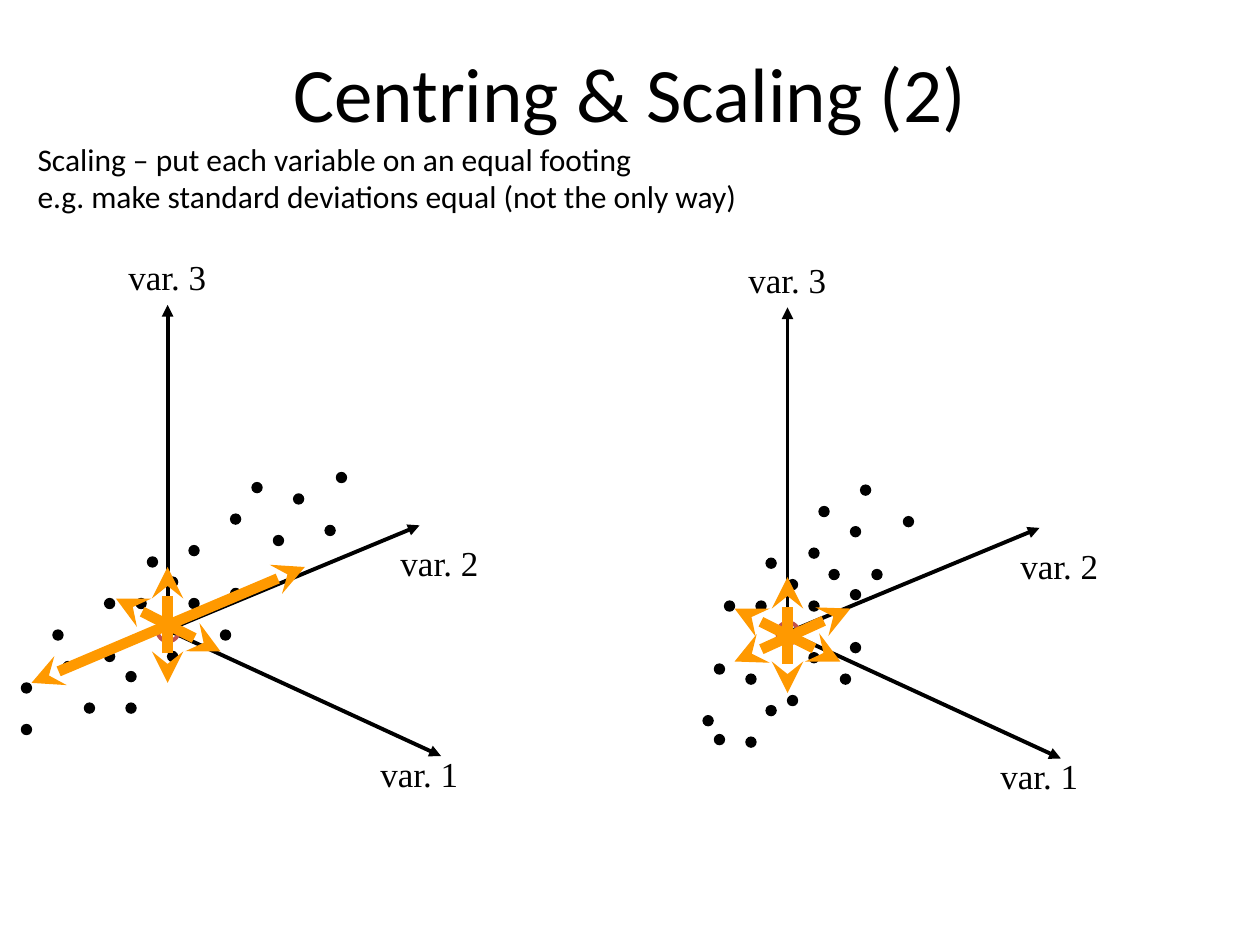
from pptx import Presentation
from pptx.dml.color import RGBColor as Rgb
from pptx.enum.shapes import MSO_CONNECTOR as Conn, MSO_SHAPE as Geo
from pptx.enum.text import MSO_ANCHOR as Anchor, MSO_AUTO_SIZE as Fit, PP_ALIGN as Align
from pptx.oxml.ns import qn
from pptx.util import Inches, Pt
from lxml.etree import SubElement as Sub

HUES = {"ink": "000000", "ring": "C0504D", "span": "FF9900"}
SANS, SERIF = "Calibri", "Times New Roman"


class Deck:
    def __init__(self):
        self.show = Presentation()
        self.show.slide_width, self.show.slide_height = Inches(10), Inches(7.5)
        self.slide = self.show.slides.add_slide(self.show.slide_layouts[5])
        self.items = self.slide.shapes

    def hue(self, name):
        return Rgb.from_string(HUES[name])

    def group(self):
        return self.slide.shapes.add_group_shape().shapes

    def place(self, shape, x, y, w, h):
        shape.left, shape.top = Inches(x), Inches(y)
        shape.width, shape.height = Inches(w), Inches(h)

    def style(self, par, size, face):
        par.font.size, par.font.name = Pt(size), face
        par.font.color.rgb = self.hue("ink")

    def title(self, text):
        head = self.slide.shapes.title
        self.place(head, 0.5, 0.1, 9, 1.25)
        head.text_frame.text = text
        head.text_frame.vertical_anchor = Anchor.MIDDLE
        par = head.text_frame.paragraphs[0]
        par.alignment = Align.CENTER
        self.style(par, 44, SANS)

    def text(self, lines, x, y, w, h, size, face, wrap=False):
        box = self.items.add_textbox(Inches(x), Inches(y), Inches(w), Inches(h))
        frame = box.text_frame
        frame.text = "\n".join(lines)
        frame.word_wrap = wrap
        frame.auto_size = Fit.SHAPE_TO_FIT_TEXT
        for par in frame.paragraphs:
            self.style(par, size, face)

    def line(self, items, start, end, hue, width, head=None, tail=None):
        link = items.add_connector(Conn.STRAIGHT, *map(Inches, (*start, *end)))
        link.line.color.rgb = self.hue(hue)
        link.line.width = Pt(width)
        props = link.line._get_or_add_ln()
        for tag, kind in (("a:headEnd", head), ("a:tailEnd", tail)):
            if kind:
                Sub(props, qn(tag), type=kind)
        Sub(link._element.spPr, qn("a:effectLst"))

    def disc(self, items, x, y, size, hue, width, solid=True):
        dot = items.add_shape(Geo.OVAL, *map(Inches, (x, y, size, size)))
        dot.shadow.inherit = False
        dot.line.color.rgb = self.hue(hue)
        dot.line.width = Pt(width)
        if solid:
            dot.fill.solid()
            dot.fill.fore_color.rgb = self.hue(hue)
        else:
            dot.fill.background()

    def axes(self, x, y):
        for dx, dy in ((0, -2.58), (2, -0.83), (2.17, 1)):
            self.line(self.items, (x, y), (x + dx, y + dy), "ink", 2.25, tail="triangle")
        for name, dx, dy in (("var. 1", 1.59, 0.92), ("var. 2", 1.75, -0.75),
                             ("var. 3", -0.41, -3.02)):
            self.text([name], x + dx, y + dy, 0.88, 0.43, 20, SERIF)

    def cloud(self, items, dots, x, y):
        for left, top in dots:
            self.disc(items, left, top, 0.08, "ink", 0.75)
        self.disc(items, x - 0.08, y - 0.08, 0.17, "ring", 2.25, False)

    def spans(self, pairs):
        items = self.group()
        for start, end in pairs:
            self.line(items, start, end, "span", 6, "stealth", "stealth")


RAW = [(0.67, 5.58), (0.42, 5), (0.17, 5.42), (1, 5.33), (0.17, 5.75), (0.5, 5.25),
       (0.83, 5.17), (1.08, 4.75), (1.33, 5.17), (1.5, 4.33), (1.17, 4.42), (1.33, 4.58),
       (1.5, 4.75), (2.17, 4.25), (1.83, 4.67), (1.83, 4.08), (2.33, 3.92), (2.58, 4.17),
       (2.67, 3.75), (1, 5.58), (1.75, 5), (2, 3.83), (0.83, 4.75)]
SCALED = [(5.67, 5.83), (5.92, 5.85), (5.58, 5.68), (5.92, 5.35), (6.25, 5.52), (6.08, 5.6),
          (5.67, 5.27), (6, 4.77), (6.42, 5.18), (6.42, 4.35), (6.08, 4.43), (6.25, 4.6),
          (6.42, 4.77), (6.58, 4.52), (6.75, 4.68), (6.5, 4.02), (6.75, 4.18), (6.92, 4.52),
          (7.17, 4.1), (6.67, 5.35), (6.75, 5.1), (6.83, 3.85), (5.75, 4.77)]


def main():
    deck = Deck()
    deck.title("Centring & Scaling (2)")
    deck.axes(1.33, 5)
    deck.cloud(deck.group(), RAW, 1.33, 5)
    deck.text(["Scaling – put each variable on an equal footing",
               "e.g. make standard deviations equal (not the only way)"],
              0.2, 1.06, 9.63, 1.03, 18, SANS, True)
    deck.axes(6.25, 5.02)
    deck.cloud(deck.items, SCALED, 6.25, 5.02)
    deck.spans([((0.25, 5.42), (2.42, 4.5)), ((0.92, 4.75), (1.75, 5.17)),
                ((1.33, 5.42), (1.33, 4.5))])
    deck.spans([((5.83, 5.25), (6.75, 4.83)), ((5.83, 4.83), (6.67, 5.25)),
                ((6.25, 5.5), (6.25, 4.58))])
    deck.show.save("out.pptx")


if __name__ == "__main__":
    main()
